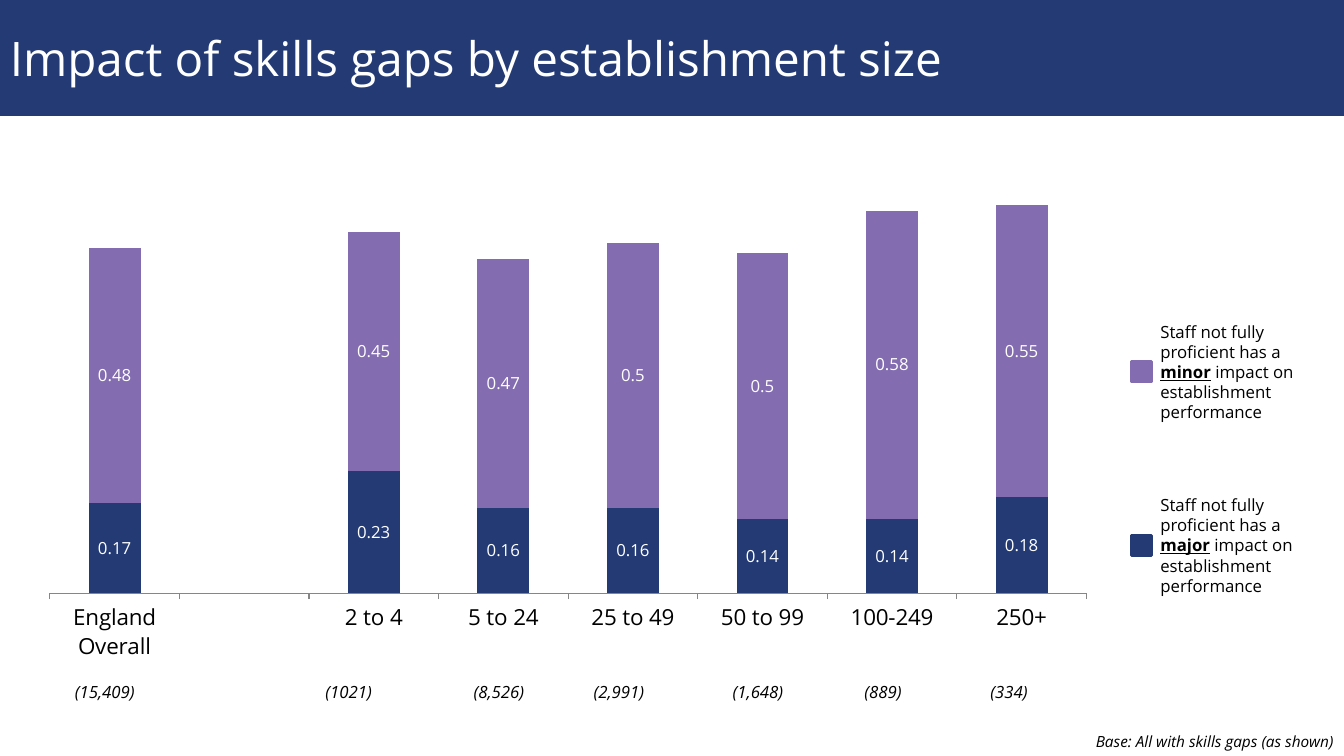
from lxml.etree import SubElement
from pptx import Presentation
from pptx.chart.data import CategoryChartData
from pptx.dml.color import RGBColor
from pptx.enum.chart import XL_CHART_TYPE as ChartType, XL_LABEL_POSITION as LabelPos
from pptx.enum.chart import XL_TICK_LABEL_POSITION as TickLabelPos, XL_TICK_MARK as TickMark
from pptx.enum.shapes import MSO_SHAPE as Shape
from pptx.enum.text import MSO_ANCHOR as Anchor, PP_ALIGN as Align
from pptx.oxml import parse_xml
from pptx.oxml.ns import nsdecls, qn
from pptx.util import Inches, Pt

NAVY = RGBColor(0x23, 0x3A, 0x75)
PURPLE = RGBColor(0x83, 0x6D, 0xB0)
WHITE = RGBColor(0xFF, 0xFF, 0xFF)
BLACK = RGBColor(0, 0, 0)
GREY = RGBColor(0x86, 0x86, 0x86)

CATEGORIES = ["England Overall", "", "2 to 4", "5 to 24", "25 to 49", "50 to 99", "100-249", "250+"]
SERIES = [
    ("Major impact", NAVY, [0.17, None, 0.23, 0.16, 0.16, 0.14, 0.14, 0.18]),
    ("Minor impact", PURPLE, [0.48, None, 0.45, 0.47, 0.5, 0.5, 0.58, 0.55]),
]
BASES = [("(15,409)", 0.94), ("(1021)", 3.36), ("(8,526)", 4.85), ("(2,991)", 6.04),
         ("(1,648)", 7.42), ("(889)", 8.66), ("(334)", 9.91)]
LEGEND = [("major", NAVY, 4.86), ("minor", PURPLE, 3.14)]


class SlideBuilder:
    font = "Open Sans"

    def __init__(self, slide):
        self.slide = slide

    def style(self, font, size, color=BLACK, bold=False, italic=False):
        font.name, font.size = self.font, Pt(size)
        font.bold, font.italic = bold, italic
        font.color.rgb = color

    def rect(self, x, y, w, h, color, line_width=None):
        s = self.slide.shapes.add_shape(Shape.RECTANGLE, Inches(x), Inches(y), Inches(w), Inches(h))
        s.shadow.inherit = False
        s.fill.solid()
        s.fill.fore_color.rgb = color
        if line_width:
            s.line.color.rgb = color
            s.line.width = Pt(line_width)
        else:
            s.line.fill.background()
        return s

    def title(self, text, height):
        tf = self.rect(0, 0, 13.33, height, NAVY).text_frame
        tf.text = text
        tf.word_wrap = True
        tf.vertical_anchor = Anchor.MIDDLE
        p = tf.paragraphs[0]
        p.alignment = Align.LEFT
        self.style(p.runs[0].font, 34, WHITE)

    def text(self, x, y, w, h, parts, size, italic=False, align=Align.LEFT, emphasis=None):
        tf = self.slide.shapes.add_textbox(Inches(x), Inches(y), Inches(w), Inches(h)).text_frame
        tf.word_wrap = True
        p = tf.paragraphs[0]
        p.alignment = align
        for part in parts:
            r = p.add_run()
            r.text = part
            self.style(r.font, size, bold=part == emphasis, italic=italic)
            r.font.underline = part == emphasis
        return p

    def tabbed_row(self, x, y, w, h, entries, size):
        p = self.text(x, y, w, h, ["".join("\t" + label for label, _ in entries)], size, italic=True)
        tabs = SubElement(p._p.get_or_add_pPr(), qn("a:tabLst"))
        for _, stop in entries:
            SubElement(tabs, qn("a:tab"), pos=str(Inches(stop)), algn="ctr")

    def legend_entry(self, word, color, y):
        self.rect(11.22, y + 0.45, 0.2, 0.2, color, 2)
        parts = ["Staff not fully proficient has a ", word, " impact on establishment performance"]
        self.text(11.41, y, 1.52, 1.11, parts, 12, emphasis=word)

    def stacked_chart(self, x, y, w, h, categories, series):
        data = CategoryChartData()
        data.categories = categories
        for name, _, values in series:
            data.add_series(name, values)
        chart = self.slide.shapes.add_chart(
            ChartType.COLUMN_STACKED, Inches(x), Inches(y), Inches(w), Inches(h), data).chart
        self.style(chart.font, 18)
        chart.has_legend = False
        chart.has_title = False

        plot = chart.plots[0]
        plot.gap_width, plot.overlap = 150, 100
        plot.vary_by_categories = False
        for ser, (_, color, _) in zip(plot.series, series):
            ser.format.fill.solid()
            ser.format.fill.fore_color.rgb = color
            labels = ser.data_labels
            labels.show_value = True
            labels.position = LabelPos.CENTER
            self.style(labels.font, 12, WHITE)

        value_axis = chart.value_axis
        value_axis.minimum_scale, value_axis.maximum_scale = 0, 0.8
        value_axis.has_major_gridlines = False
        value_axis.visible = False
        category_axis = chart.category_axis
        category_axis.major_tick_mark = TickMark.OUTSIDE
        category_axis.tick_label_position = TickLabelPos.LOW
        category_axis.format.line.color.rgb = GREY
        self.style(category_axis.tick_labels.font, 16)
        self.place_plot(chart, x=0.021, y=0.03, w=0.816, h=0.844)

    def place_plot(self, chart, **box):
        area = chart._chartSpace.chart.plotArea
        for old in area.findall(qn("c:layout")):
            area.remove(old)
        sizes = "".join(f'<c:{key} val="{value}"/>' for key, value in box.items())
        area.insert(0, parse_xml(
            f'<c:layout {nsdecls("c")}><c:manualLayout><c:layoutTarget val="inner"/>'
            f'<c:xMode val="edge"/><c:yMode val="edge"/>{sizes}</c:manualLayout></c:layout>'))


def main():
    prs = Presentation()
    prs.slide_width, prs.slide_height = Inches(13.33), Inches(7.5)
    b = SlideBuilder(prs.slides.add_slide(prs.slide_layouts[6]))
    b.title("Impact of skills gaps by establishment size", 1.15)
    b.stacked_chart(0.23, 1.52, 12.6, 5.04, CATEGORIES, SERIES)
    b.tabbed_row(0, 6.71, 11.11, 0.3, BASES, 12)
    b.text(10.6, 7.21, 2.73, 0.29, ["Base: All with skills gaps (as shown)"], 11,
           italic=True, align=Align.RIGHT)
    for word, color, y in LEGEND:
        b.legend_entry(word, color, y)
    prs.save("out.pptx")


if __name__ == "__main__":
    main()
